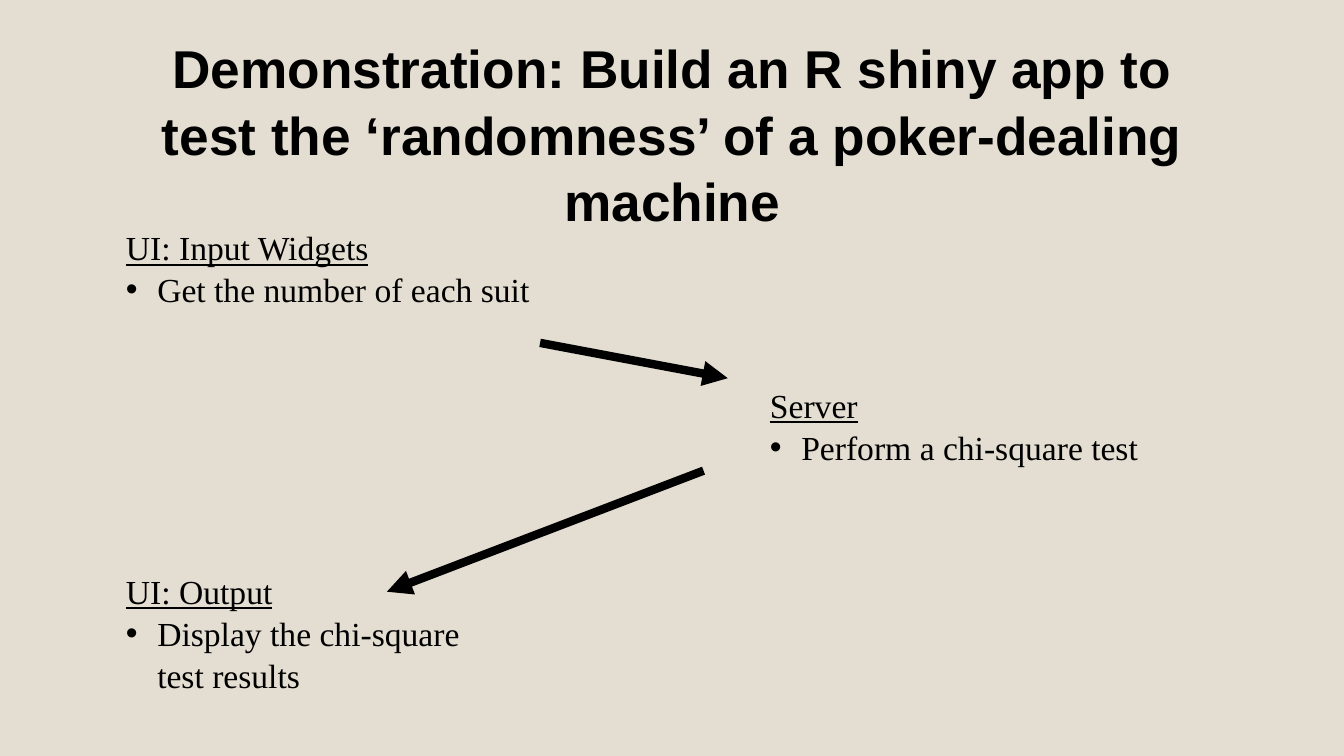
from lxml.etree import SubElement
from pptx import Presentation
from pptx.dml.color import RGBColor
from pptx.enum.shapes import MSO_CONNECTOR
from pptx.enum.text import MSO_ANCHOR as Anchor, MSO_AUTO_SIZE as AutoSize, PP_ALIGN as Align
from pptx.oxml.ns import qn
from pptx.util import Cm, Pt

BACKGROUND = RGBColor(0xE3, 0xDE, 0xD1)
BLACK = RGBColor(0, 0, 0)
LEFT = 2.92
LINE_SPACING = 1.04
BULLET_INDENT = Cm(0.79)


def place(placeholder, box):
    placeholder.left, placeholder.top, placeholder.width, placeholder.height = map(Cm, box)
    frame = placeholder.text_frame
    frame.word_wrap = True
    frame.auto_size = AutoSize.NONE
    frame.vertical_anchor = Anchor.TOP
    return frame


def style(paragraph, font_name, size, bold, align):
    paragraph.font.name = font_name
    paragraph.font.size = Pt(size)
    paragraph.font.bold = bold
    paragraph.font.color.rgb = BLACK
    paragraph.alignment = align
    paragraph.line_spacing = LINE_SPACING
    paragraph.space_before = paragraph.space_after = Pt(0)


def set_bullet(paragraph, char=None):
    properties = paragraph._p.get_or_add_pPr()
    indent = BULLET_INDENT if char else 0
    properties.set("marL", str(indent))
    properties.set("indent", str(-indent))
    if char:
        SubElement(properties, qn("a:buFont"), typeface="Arial")
        SubElement(properties, qn("a:buChar"), char=char)
    else:
        SubElement(properties, qn("a:buNone"))


def add_title(placeholder, box, title):
    frame = place(placeholder, box)
    frame.text = title
    style(frame.paragraphs[0], "Arial", 38, True, Align.CENTER)


def add_app_part(placeholder, box, heading, task):
    frame = place(placeholder, box)
    frame.text = f"{heading}\n{task}"
    for paragraph, bullet in zip(frame.paragraphs, (None, "•")):
        style(paragraph, "Times New Roman", 24, False, Align.LEFT)
        paragraph.font.underline = bullet is None
        set_bullet(paragraph, bullet)


def add_flow_arrow(slide, start, end):
    arrow = slide.shapes.add_connector(MSO_CONNECTOR.STRAIGHT, *map(Cm, start + end))
    arrow.line.color.rgb = BLACK
    arrow.line.width = Pt(6)
    SubElement(arrow.line._get_or_add_ln(), qn("a:tailEnd"), type="triangle")
    SubElement(arrow._element.spPr, qn("a:effectLst"))


def build_demonstration(presentation):
    slide = presentation.slides.add_slide(presentation.slide_layouts.get_by_name("Comparison"))
    slide.background.fill.solid()
    slide.background.fill.fore_color.rgb = BACKGROUND

    title, inputs, server, output, spare = slide.placeholders
    spare._element.getparent().remove(spare._element)

    add_title(title, (LEFT, 0.71, 28.04, 3.51),
              "Demonstration: Build an R shiny app to test the ‘randomness’ of a poker-dealing machine")
    add_app_part(inputs, (LEFT, 5.56, 11.2, 4.11),
                 "UI: Input Widgets", "Get the number of each suit")
    add_app_part(server, (19.15, 9.53, 14.15, 3.07),
                 "Server", "Perform a chi-square test")
    add_app_part(output, (LEFT, 14.22, 8.92, 4.11),
                 "UI: Output", "Display the chi-square test results")

    add_flow_arrow(slide, (13.61, 8.64), (18.34, 9.53))
    add_flow_arrow(slide, (17.73, 11.86), (9.75, 14.91))


def main():
    presentation = Presentation()
    presentation.slide_width = Cm(33.87)
    presentation.slide_height = Cm(19.05)
    build_demonstration(presentation)
    presentation.save("out.pptx")


if __name__ == "__main__":
    main()
